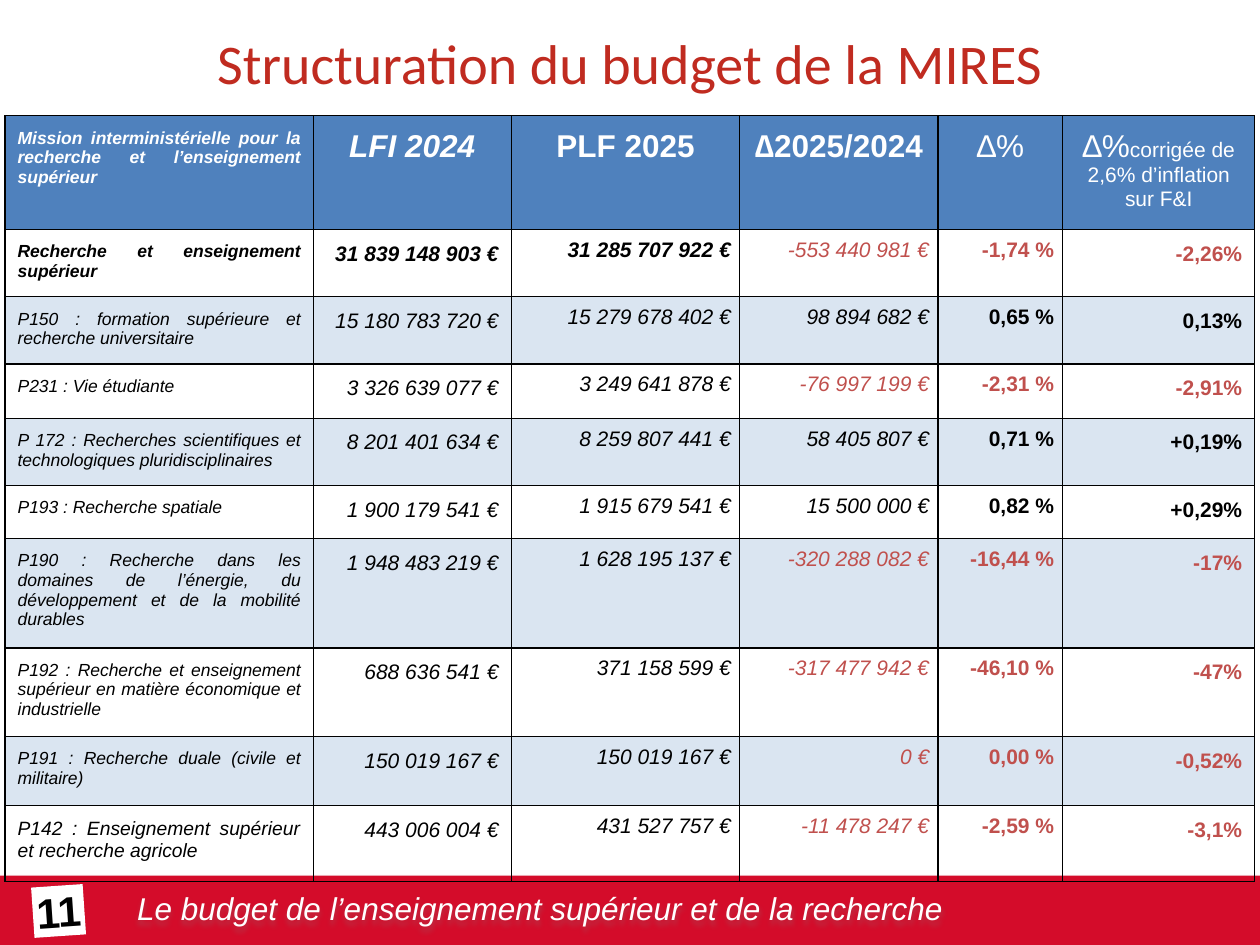
from lxml.etree import SubElement
from pptx import Presentation
from pptx.dml.color import RGBColor
from pptx.enum.shapes import MSO_SHAPE
from pptx.enum.text import MSO_ANCHOR, PP_ALIGN
from pptx.oxml import parse_xml
from pptx.oxml.ns import nsdecls, qn
from pptx.util import Inches, Pt

COLORS = {
    "title": "C02B20", "band": "D40C2A", "shadow": "808080", "header": "4F81BD",
    "stripe": "DAE5F1", "loss": "C0504D", "black": "000000", "white": "FFFFFF",
}
COLUMN_WIDTHS = [2.44, 1.57, 1.81, 1.57, 0.99, 1.52]
ROW_HEIGHTS = [0.89, 0.52, 0.52, 0.43, 0.52, 0.42, 0.86, 0.69, 0.55, 0.6]
HEADERS = [
    "Mission interministérielle pour la recherche et l’enseignement supérieur",
    "LFI 2024", "PLF 2025", "∆2025/2024", "∆%", "∆%",
]
HEADER_NOTE = "corrigée de 2,6% d’inflation sur F&I"
PROGRAMMES = [
    ("Recherche et enseignement supérieur",
     "31 839 148 903 €", "31 285 707 922 €", "-553 440 981 €", "-1,74 %", "-2,26%"),
    ("P150 : formation supérieure et recherche universitaire",
     "15 180 783 720 €", "15 279 678 402 €", "98 894 682 €", "0,65 %", "0,13%"),
    ("P231 : Vie étudiante",
     "3 326 639 077 €", "3 249 641 878 €", "-76 997 199 €", "-2,31 %", "-2,91%"),
    ("P 172 : Recherches scientifiques et technologiques pluridisciplinaires",
     "8 201 401 634 €", "8 259 807 441 €", "58 405 807 €", "0,71 %", "+0,19%"),
    ("P193 : Recherche spatiale",
     "1 900 179 541 €", "1 915 679 541 €", "15 500 000 €", "0,82 %", "+0,29%"),
    ("P190 : Recherche dans les domaines de l’énergie, du développement "
     "et de la mobilité durables",
     "1 948 483 219 €", "1 628 195 137 €", "-320 288 082 €", "-16,44 %", "-17%"),
    ("P192 : Recherche et enseignement supérieur en matière économique et industrielle",
     "688 636 541 €", "371 158 599 €", "-317 477 942 €", "-46,10 %", "-47%"),
    ("P191 : Recherche duale (civile et militaire)",
     "150 019 167 €", "150 019 167 €", "0 €", "0,00 %", "-0,52%"),
    ("P142 : Enseignement supérieur et recherche agricole",
     "443 006 004 €", "431 527 757 €", "-11 478 247 €", "-2,59 %", "-3,1%"),
]


def rgb(name):
    return RGBColor.from_string(COLORS[name])


def style(font, size, color, bold=False, italic=False, face="Arial"):
    font.name = face
    font.size = Pt(size)
    font.color.rgb = rgb(color)
    font.bold = bold
    font.italic = italic


def add_shadow(shape):
    shape.shadow.inherit = False
    effects = shape._element.spPr.find(qn("a:effectLst"))
    effects.append(parse_xml(
        f'<a:outerShdw {nsdecls("a")} blurRad="{Pt(3.1)}" dist="{Pt(1.8)}" dir="5400000">'
        f'<a:srgbClr val="{COLORS["shadow"]}"><a:alpha val="35000"/></a:srgbClr>'
        '</a:outerShdw>'))


def add_block(slide, left, top, width, height, color):
    block = slide.shapes.add_shape(
        MSO_SHAPE.RECTANGLE, Inches(left), Inches(top), Inches(width), Inches(height))
    block.shadow.inherit = False
    block.fill.solid()
    block.fill.fore_color.rgb = rgb(color)
    block.line.fill.background()
    return block


def add_footer(slide, left, top, width, height):
    add_shadow(add_block(slide, left, top, width, height, "band"))

    caption = slide.shapes.add_textbox(
        Inches(left + 0.99), Inches(top + 0.06), Inches(7.28), Inches(0.4))
    add_shadow(caption)
    caption.text_frame.word_wrap = True
    paragraph = caption.text_frame.paragraphs[0]
    paragraph.text = "Le budget de l’enseignement supérieur et de la recherche"
    style(paragraph.font, 18, "white", italic=True)

    page = add_block(slide, left + 0.26, top + 0.08, 0.41, 0.4, "white")
    page.rotation = 356.1
    frame = page.text_frame
    frame.margin_left = frame.margin_right = frame.margin_top = frame.margin_bottom = 0
    frame.vertical_anchor = MSO_ANCHOR.MIDDLE
    number = frame.paragraphs[0]
    number.text = "11"
    number.alignment = PP_ALIGN.CENTER
    style(number.font, 24, "black", bold=True)


def place_title(slide, left, top, width, height):
    title = slide.shapes.title
    title.left, title.top = Inches(left), Inches(top)
    title.width, title.height = Inches(width), Inches(height)
    title.text_frame.vertical_anchor = MSO_ANCHOR.MIDDLE
    paragraph = title.text_frame.paragraphs[0]
    paragraph.text = "Structuration du budget de la MIRES"
    paragraph.alignment = PP_ALIGN.CENTER
    style(paragraph.font, 32, "title", face="Calibri")


def format_cell(cell, fill, margin):
    cell.margin_left = cell.margin_right = Inches(margin)
    cell.margin_top = cell.margin_bottom = Inches(margin)
    properties = cell._tc.get_or_add_tcPr()
    for side in ("a:lnL", "a:lnR", "a:lnT", "a:lnB"):
        border = SubElement(properties, qn(side), w=str(Pt(0.75)))
        SubElement(SubElement(border, qn("a:solidFill")), qn("a:srgbClr"), val=COLORS["black"])
    if fill:
        cell.fill.solid()
        cell.fill.fore_color.rgb = rgb(fill)
    else:
        cell.fill.background()


def fill_header(table):
    for column, label in enumerate(HEADERS):
        cell = table.cell(0, column)
        format_cell(cell, "header", 0.1)
        paragraph = cell.text_frame.paragraphs[0]
        paragraph.alignment = PP_ALIGN.CENTER if column else PP_ALIGN.JUSTIFY
        run = paragraph.add_run()
        run.text = label
        if column == len(HEADERS) - 1:
            style(run.font, 18, "white")
            note = paragraph.add_run()
            note.text = HEADER_NOTE
            style(note.font, 12, "white")
        else:
            style(paragraph.font, 18 if column else 10, "white",
                  bold=column < 4, italic=column < 2)


def fill_programme(table, row, values):
    is_total = row == 1
    is_last = row == len(PROGRAMMES)
    is_loss = values[-1].startswith("-")
    for column, value in enumerate(values):
        cell = table.cell(row, column)
        format_cell(cell, None if row % 2 else "stripe", 0.07 if column in (2, 3, 4) else 0.1)
        paragraph = cell.text_frame.paragraphs[0]
        paragraph.text = value
        paragraph.alignment = PP_ALIGN.RIGHT if column else PP_ALIGN.JUSTIFY
        label_size = 11 if is_last else 10
        style(paragraph.font, 12 if column else label_size,
              "loss" if is_loss and column > 2 else "black",
              bold=column > 3 or (is_total and column < 3), italic=column < 4)


def add_budget_table(slide, left, top, width, height):
    table = slide.shapes.add_table(
        len(ROW_HEIGHTS), len(COLUMN_WIDTHS),
        Inches(left), Inches(top), Inches(width), Inches(height)).table
    table.first_row = table.horz_banding = False
    for column, share in zip(table.columns, COLUMN_WIDTHS):
        column.width = Inches(width * share / sum(COLUMN_WIDTHS))
    for row, share in zip(table.rows, ROW_HEIGHTS):
        row.height = Inches(height * share / sum(ROW_HEIGHTS))
    fill_header(table)
    for row, values in enumerate(PROGRAMMES, start=1):
        fill_programme(table, row, values)


def main():
    deck = Presentation()
    deck.slide_width, deck.slide_height = Inches(10), Inches(7.5)
    slide = deck.slides.add_slide(deck.slide_layouts[5])
    add_footer(slide, 0, 6.95, 10, 0.55)
    place_title(slide, 0, 0, 10, 0.98)
    add_budget_table(slide, 0.04, 0.92, 9.92, 6.01)
    deck.save("out.pptx")


if __name__ == "__main__":
    main()
